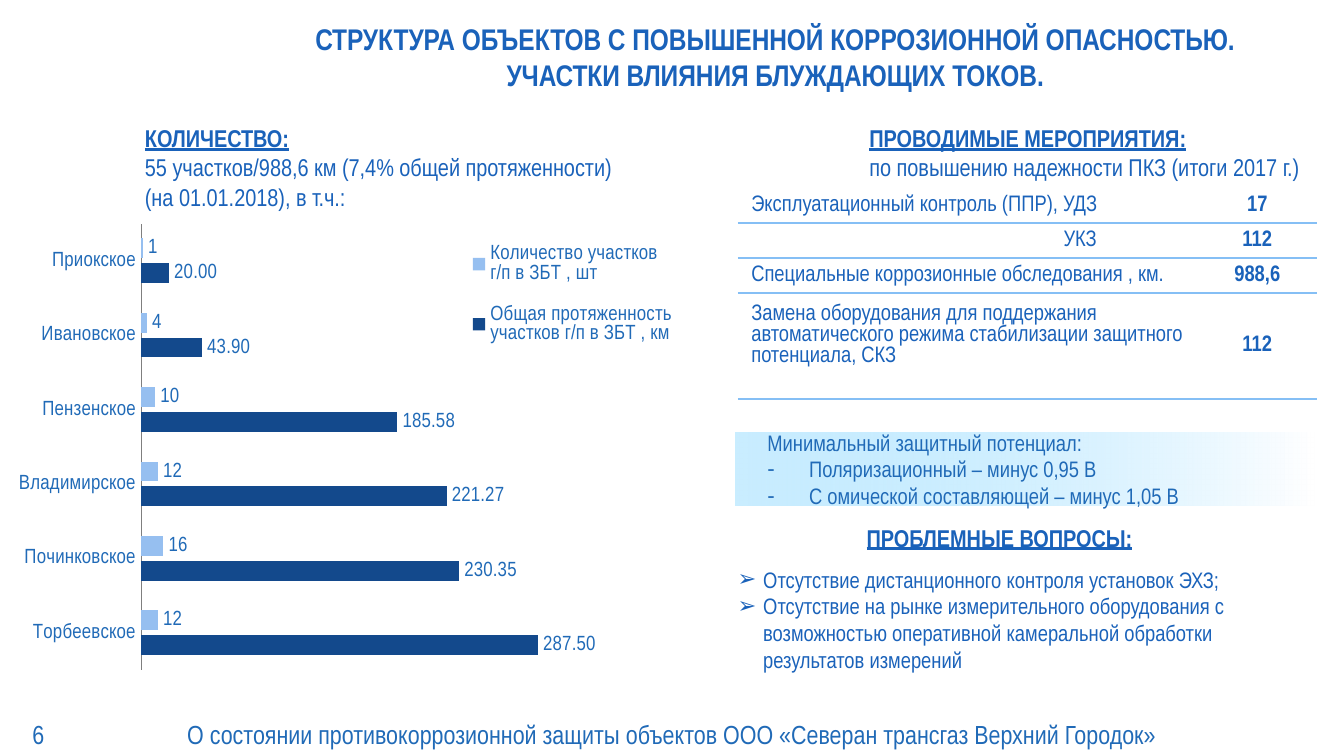
from lxml import etree
from pptx import Presentation
from pptx.chart.data import CategoryChartData
from pptx.dml.color import RGBColor
from pptx.enum import chart as charts, shapes, text
from pptx.oxml import parse_xml
from pptx.oxml.ns import nsdecls, qn
from pptx.util import Inches, Pt

FONT = "Arial Narrow"
COLORS = {"heading": "1A62BA", "body": "206AB7", "rule": "85BFF5", "axis": "7F7F7F",
          "length": "13498C", "count": "96BFF0", "glow": "66CCFF", "white": "FFFFFF"}
LEFT, CENTER, RIGHT = text.PP_ALIGN.LEFT, text.PP_ALIGN.CENTER, text.PP_ALIGN.RIGHT
TOP, MIDDLE = text.MSO_ANCHOR.TOP, text.MSO_ANCHOR.MIDDLE
HEAD = {"bold": True, "underline": True}

# Each box: place, paragraphs (words, font format), size, colour, alignment, anchor, inset
BOXES = [
    ((0.24, 5.31, 1.75, 0.3), [("6", {})], 14, "body", LEFT, MIDDLE, 0),
    ((1.54, 0, 8.46, 0.84),
     [("СТРУКТУРА ОБЪЕКТОВ С ПОВЫШЕННОЙ КОРРОЗИОННОЙ ОПАСНОСТЬЮ.\v"
       "УЧАСТКИ ВЛИЯНИЯ БЛУЖДАЮЩИХ ТОКОВ.", {"bold": True})],
     16, "heading", CENTER, MIDDLE, 0.1),
    ((0, 5.31, 10, 0.3),
     [("О состоянии противокоррозионной защиты объектов "
       "ООО «Северан трансгаз Верхний Городок»", {})], 14, "body", CENTER, MIDDLE, 0.1),
    ((0.98, 0.87, 3.81, 0.76),
     [("КОЛИЧЕСТВО:", HEAD),
      ("55 участков/988,6 км (7,4% общей протяженности)", {}),
      ("(на 01.01.2018), в т.ч.:", {})], 13, "heading", LEFT, TOP, 0.1),
    ((6.37, 0.87, 3.51, 0.54),
     [("ПРОВОДИМЫЕ МЕРОПРИЯТИЯ:", HEAD),
      ("по повышению надежности ПКЗ (итоги 2017 г.)", {})], 13, "heading", LEFT, TOP, 0.1),
    ((6.35, 3.84, 2.84, 0.32), [("ПРОБЛЕМНЫЕ ВОПРОСЫ:", HEAD)], 13, "heading", LEFT, TOP, 0.1),
]
PROBLEMS = ["Отсутствие дистанционного контроля установок ЭХЗ;",
            "Отсутствие на рынке измерительного оборудования с возможностью "
            "оперативной камеральной обработки результатов измерений"]
POTENTIAL = ["Минимальный защитный потенциал:", "Поляризационный – минус 0,95 В",
             "С омической составляющей – минус 1,05 В"]

# Each row: measure, value, height, alignment, right margin, bottom margin
MEASURES = [
    ("Эксплуатационный контроль (ППР), УДЗ", "17", 0.26, LEFT, 0.1, 0.02),
    ("УКЗ", "112", 0.26, RIGHT, 0.75, 0.02),
    ("Специальные коррозионные обследования , км.", "988,6", 0.26, LEFT, 0.1, 0.02),
    ("Замена оборудования для поддержания автоматического режима стабилизации "
     "защитного потенциала, СКЗ", "112", 0.74, LEFT, 0.1, 0.17),
]
COLUMNS = (3.42, 0.89)

BRANCHES = ["Торбеевское", "Починковское", "Владимирское", "Пензенское", "Ивановское", "Приокское"]
SERIES = [
    ("Общая протяженность участков г/п в ЗБТ , км", "length", "0.00",
     (287.5, 230.35, 221.27, 185.58, 43.9, 20)),
    ("Количество участков г/п в ЗБТ , шт", "count", "0", (12, 16, 12, 10, 4, 1)),
]


def rgb(name):
    return RGBColor.from_string(COLORS[name])


def style(font, size, color, **values):
    for key, value in {"name": FONT, "size": Pt(size), **values}.items():
        setattr(font, key, value)
    font.color.rgb = rgb(color)


def fill_frame(frame, paragraphs, size, color, align=LEFT, anchor=TOP, inset=0.1):
    frame.word_wrap = True
    frame.vertical_anchor = anchor
    frame.margin_left = frame.margin_right = Inches(inset)
    frame.margin_top = frame.margin_bottom = Inches(inset / 2)
    for number, (words, values) in enumerate(paragraphs):
        para = frame.add_paragraph() if number else frame.paragraphs[0]
        para.text = words
        para.alignment = align
        for span in para.runs:
            style(span.font, size, color, **values)


def indent(para, left, first, bullet=None):
    props = para._p.get_or_add_pPr()
    props.set("marL", str(Inches(left)))
    props.set("indent", str(Inches(first)))
    if bullet:
        etree.SubElement(props, qn("a:buFont")).set("typeface", "Arial")
        etree.SubElement(props, qn("a:buChar")).set("char", bullet)


def set_borders(cell, has_top):
    props = cell._tc.get_or_add_tcPr()
    rule = f'<a:solidFill><a:srgbClr val="{COLORS["rule"]}"/></a:solidFill>'
    sides = {"lnL": False, "lnR": False, "lnT": has_top, "lnB": True}
    for place, (side, shown) in enumerate(sides.items()):
        props.insert(place, parse_xml(
            f'<a:{side} {nsdecls("a")} w="{Pt(0.75)}">{rule if shown else "<a:noFill/>"}</a:{side}>'))


def set_layout(parent, place, index, inner=False):
    """Give a chart part its place as fractions of the chart."""
    for old in parent.findall(qn("c:layout")):
        parent.remove(old)
    target = '<c:layoutTarget val="inner"/>' if inner else ""
    modes = "".join(f'<c:{axis}Mode val="edge"/>' for axis in "xy")
    sizes = "".join(f'<c:{key} val="{value}"/>' for key, value in zip("xywh", place))
    parent.insert(index, parse_xml(
        f'<c:layout {nsdecls("c")}><c:manualLayout>{target}{modes}{sizes}'
        '</c:manualLayout></c:layout>'))


def add_measures(page):
    table = page.shapes.add_table(len(MEASURES), 2, Inches(5.49), Inches(1.4), Inches(sum(COLUMNS)),
                                  Inches(sum(row[2] for row in MEASURES))).table
    table.first_row = table.horz_banding = False
    for column, width in zip(table.columns, COLUMNS):
        column.width = Inches(width)
    for number, (measure, value, height, align, right, bottom) in enumerate(MEASURES):
        table.rows[number].height = Inches(height)
        cells = [(measure, align, right, bottom, False), (value, CENTER, 0.1, 0.02, True)]
        for column, (words, side, margin, below, bold) in enumerate(cells):
            cell = table.cell(number, column)
            fill_frame(cell.text_frame, [(words, {"bold": bold})], 12, "heading", side)
            cell.vertical_anchor = MIDDLE
            cell.margin_left, cell.margin_right = Inches(0.1), Inches(margin)
            cell.margin_top, cell.margin_bottom = Inches(0.02), Inches(below)
            cell.fill.background()
            set_borders(cell, number > 0)


def add_branches(page):
    data = CategoryChartData()
    data.categories = BRANCHES
    for name, _, number_format, values in SERIES:
        data.add_series(name, values, number_format)
    chart = page.shapes.add_chart(charts.XL_CHART_TYPE.BAR_CLUSTERED, Inches(0.04), Inches(1.63),
                                  Inches(5.06), Inches(3.39), data).chart
    style(chart.font, 11, "body")
    chart.has_title = False
    plot = chart.plots[0]
    plot.gap_width, plot.overlap, plot.vary_by_categories = 150, -25, False
    for series, (_, color, number_format, _) in zip(plot.series, SERIES):
        series.format.fill.solid()
        series.format.fill.fore_color.rgb = rgb(color)
        labels = series.data_labels
        labels.show_value = True
        labels.number_format, labels.number_format_is_linked = number_format, False
        labels.position = charts.XL_LABEL_POSITION.OUTSIDE_END
    branches, lengths = chart.category_axis, chart.value_axis
    branches.major_tick_mark = charts.XL_TICK_MARK.NONE
    branches.format.line.color.rgb = rgb("axis")
    lengths.visible = lengths.has_major_gridlines = False
    lengths.minimum_scale, lengths.maximum_scale = 0, 350
    chart.has_legend = True
    chart.legend.position = charts.XL_LEGEND_POSITION.TOP
    chart.legend.include_in_layout = False
    set_layout(chart.legend._element, (0.7, 0.01, 0.31, 0.31), 1)
    set_layout(chart._chartSpace.chart.plotArea, (0.2, 0.01, 0.71, 0.98), 0, inner=True)


def add_potential(page):
    panel = page.shapes.add_shape(shapes.MSO_SHAPE.RECTANGLE, Inches(5.47), Inches(3.22),
                                  Inches(4.31), Inches(0.54))
    panel.shadow.inherit = False
    panel.line.fill.background()
    panel.fill.gradient()
    panel.fill.gradient_angle = 0
    for stop, color in zip(panel.fill.gradient_stops, ("glow", "white")):
        stop.color.rgb = rgb(color)
    for tint, opacity in zip(panel._element.spPr.iter(qn("a:srgbClr")), (35, 82)):
        etree.SubElement(tint, qn("a:alpha")).set("val", str(opacity * 1000))
    fill_frame(panel.text_frame, [(words, {}) for words in POTENTIAL], 12, "body", LEFT, MIDDLE, 0)
    title, *limits = panel.text_frame.paragraphs
    indent(title, 0.24, 0)
    for para in limits:
        indent(para, 0.55, -0.31, "-")


def add_box(page, place, *content):
    box = page.shapes.add_textbox(*map(Inches, place))
    fill_frame(box.text_frame, *content)
    return box


def main():
    deck = Presentation()
    deck.slide_width = Inches(10)
    deck.slide_height = deck.slide_width * 9 // 16
    page = deck.slides.add_slide(deck.slide_layouts[6])
    for place, *content in BOXES:
        add_box(page, place, *content)
    add_measures(page)
    add_potential(page)
    problems = add_box(page, (5.39, 4.16, 4.41, 0.91), [(words, {}) for words in PROBLEMS],
                       12, "heading")
    for para in problems.text_frame.paragraphs:
        indent(para, 0.19, -0.19, "➢")
    add_branches(page)
    deck.save("out.pptx")


if __name__ == "__main__":
    main()
